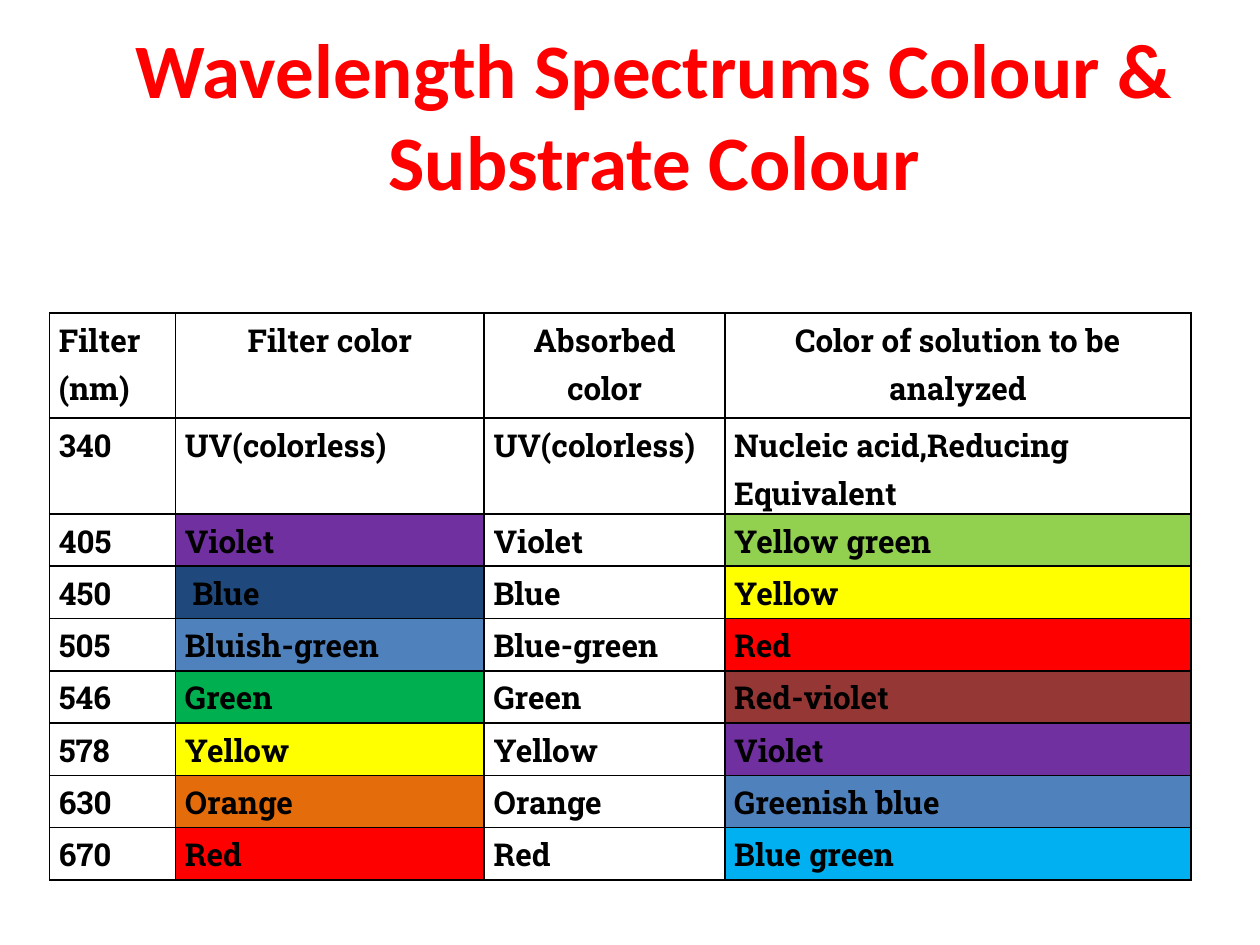
from lxml import etree
from pptx import Presentation
from pptx.dml.color import RGBColor
from pptx.enum.text import MSO_ANCHOR, PP_ALIGN
from pptx.oxml.ns import qn
from pptx.util import Pt

LEFT = PP_ALIGN.LEFT
CENTER = PP_ALIGN.CENTER
MIDDLE = MSO_ANCHOR.MIDDLE

BLACK = RGBColor(0x00, 0x00, 0x00)
RED = RGBColor(0xFF, 0x00, 0x00)
VIOLET = RGBColor(0x70, 0x30, 0xA0)
NAVY = RGBColor(0x1F, 0x49, 0x7D)
BLUE = RGBColor(0x4F, 0x81, 0xBD)
GREEN = RGBColor(0x00, 0xB0, 0x50)
YELLOW = RGBColor(0xFF, 0xFF, 0x00)
ORANGE = RGBColor(0xE4, 0x6C, 0x0A)
LIME = RGBColor(0x92, 0xD0, 0x50)
MAROON = RGBColor(0x95, 0x37, 0x35)
SKY = RGBColor(0x00, 0xB0, 0xF0)

HEADERS = ["Filter\n(nm)", "Filter color", "Absorbed color", "Color of solution to be analyzed"]
FILTERS = [
    ("340", "UV(colorless)", None, "UV(colorless)", "Nucleic acid,Reducing Equivalent", None),
    ("405", "Violet", VIOLET, "Violet", "Yellow green", LIME),
    ("450", " Blue", NAVY, "Blue", "Yellow", YELLOW),
    ("505", "Bluish-green", BLUE, "Blue-green", "Red", RED),
    ("546", "Green", GREEN, "Green", "Red-violet", MAROON),
    ("578", "Yellow", YELLOW, "Yellow", "Violet", VIOLET),
    ("630", "Orange", ORANGE, "Orange", "Greenish blue", BLUE),
    ("670", "Red", RED, "Red", "Blue green", SKY),
]
COLUMN_WIDTHS = [72, 176.4, 137.5, 266.4]
ROW_HEIGHTS = [60, 54.8] + [29.9] * (len(FILTERS) - 1)


def write_text(text_frame, text, font="Roboto Slab", size=18, color=BLACK, align=LEFT, spacing=1.15):
    text_frame.word_wrap = True
    text_frame.text = text
    for paragraph in text_frame.paragraphs:
        paragraph.alignment = align
        paragraph.line_spacing = spacing
        for run in paragraph.runs:
            run.font.name = font
            run.font.size = Pt(size)
            run.font.bold = True
            run.font.color.rgb = color


def add_borders(cell):
    properties = cell._tc.get_or_add_tcPr()
    for side in ("a:lnL", "a:lnR", "a:lnT", "a:lnB"):
        line = etree.SubElement(properties, qn(side), w=str(Pt(1)))
        fill = etree.SubElement(line, qn("a:solidFill"))
        etree.SubElement(fill, qn("a:srgbClr"), val=str(BLACK))


presentation = Presentation()
presentation.slide_width = Pt(720)
presentation.slide_height = Pt(540)
slide = presentation.slides.add_slide(presentation.slide_layouts[6])

title = slide.shapes.add_textbox(Pt(0), Pt(22.3), Pt(748), Pt(85))
title.text_frame.vertical_anchor = MIDDLE
write_text(title.text_frame, "Wavelength Spectrums Colour & Substrate Colour",
           font="Calibri", size=44, color=RED, align=CENTER, spacing=1.0)

table = slide.shapes.add_table(len(ROW_HEIGHTS), len(COLUMN_WIDTHS), Pt(28.3), Pt(178.9),
                               Pt(sum(COLUMN_WIDTHS)), Pt(sum(ROW_HEIGHTS))).table
table.first_row = False
table.horz_banding = False
for column, width in zip(table.columns, COLUMN_WIDTHS):
    column.width = Pt(width)
for row, height in zip(table.rows, ROW_HEIGHTS):
    row.height = Pt(height)

rows = [[(header, None) for header in HEADERS]]
for wavelength, filter_color, filter_fill, absorbed, solution, solution_fill in FILTERS:
    rows.append([(wavelength, None), (filter_color, filter_fill),
                 (absorbed, None), (solution, solution_fill)])

for row_index, row in enumerate(rows):
    for column_index, (text, color) in enumerate(row):
        cell = table.cell(row_index, column_index)
        cell.margin_left = cell.margin_right = Pt(5.4)
        cell.margin_top = cell.margin_bottom = Pt(0)
        add_borders(cell)
        if color is None:
            cell.fill.background()
        else:
            cell.fill.solid()
            cell.fill.fore_color.rgb = color
        centered = row_index == 0 and column_index > 0
        write_text(cell.text_frame, text, align=CENTER if centered else LEFT)

presentation.save("out.pptx")
